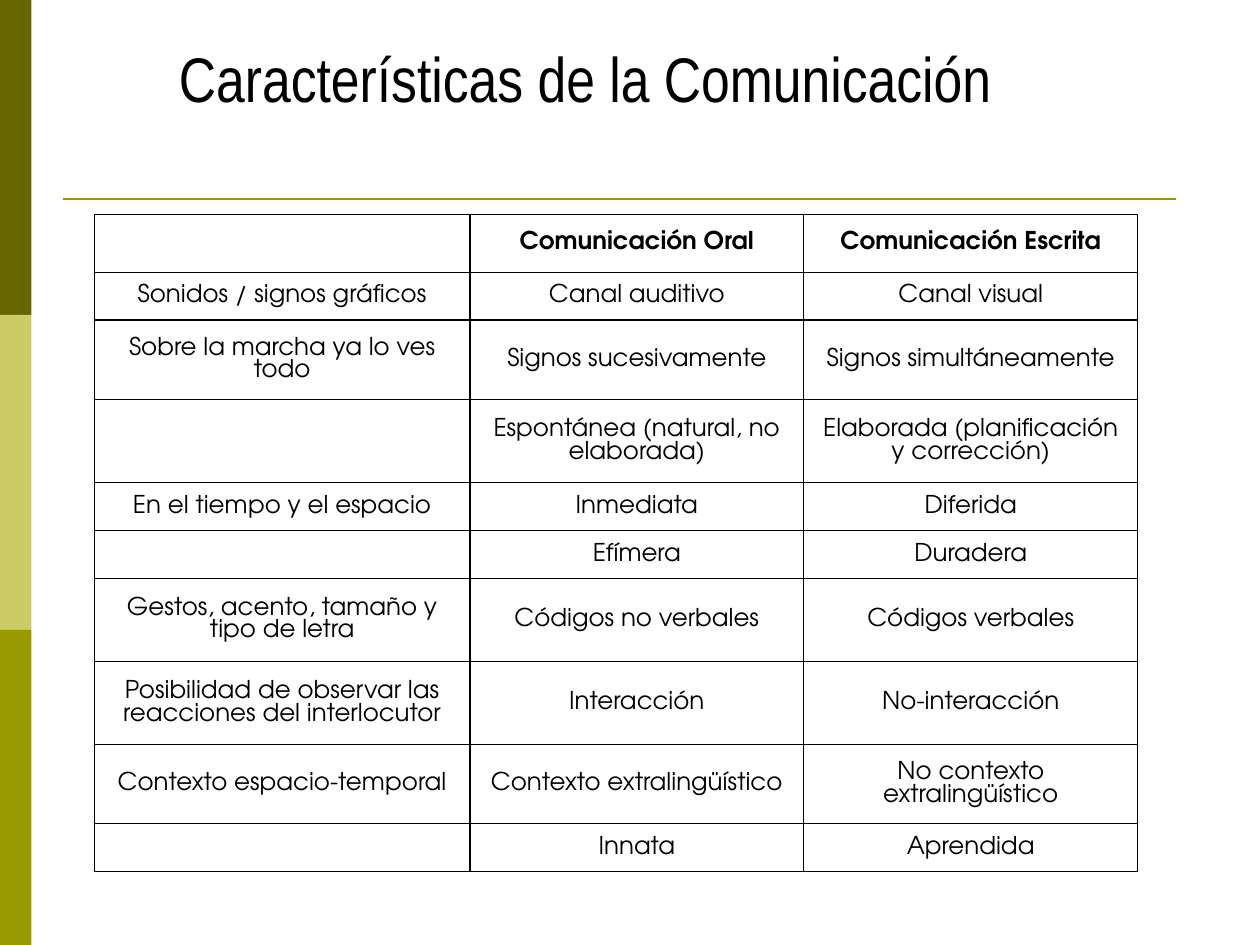
from lxml.etree import SubElement
from pptx import Presentation
from pptx.dml.color import RGBColor
from pptx.enum.shapes import MSO_CONNECTOR, MSO_SHAPE
from pptx.enum.text import MSO_ANCHOR, MSO_AUTO_SIZE, PP_ALIGN
from pptx.oxml import parse_xml
from pptx.oxml.ns import nsdecls, qn
from pptx.util import Inches, Pt

BLACK = RGBColor(0x00, 0x00, 0x00)
DARK_OLIVE = RGBColor(0x66, 0x66, 0x00)
LIGHT_OLIVE = RGBColor(0xCC, 0xCC, 0x66)
OLIVE = RGBColor(0x99, 0x99, 0x00)
TITLE_FONT = "Arial Narrow"
TABLE_FONT = "TeX Gyre Adventor"

TITLE = "Características de la Comunicación"
BAND_COLORS = [DARK_OLIVE, LIGHT_OLIVE, OLIVE]
COLUMN_WIDTHS = [2.98, 2.65, 2.65]
ROWS = [
    (0.46, "", "Comunicación Oral", "Comunicación Escrita"),
    (0.38, "Sonidos / signos gráficos", "Canal auditivo", "Canal visual"),
    (0.63, "Sobre la marcha ya lo ves todo", "Signos sucesivamente", "Signos simultáneamente"),
    (0.66, "", "Espontánea (natural, no elaborada)", "Elaborada (planificación y corrección)"),
    (0.38, "En el tiempo y el espacio", "Inmediata", "Diferida"),
    (0.38, "", "Efímera", "Duradera"),
    (0.66, "Gestos, acento, tamaño y tipo de letra", "Códigos no verbales", "Códigos verbales"),
    (0.66, "Posibilidad de observar las reacciones del interlocutor", "Interacción", "No-interacción"),
    (0.63, "Contexto espacio-temporal", "Contexto extralingüístico", "No contexto extralingüístico"),
    (0.38, "", "Innata", "Aprendida"),
]


def outline_xml(tag):
    return parse_xml(
        f'<a:{tag} {nsdecls("a")} w="{Pt(0.75)}"><a:solidFill>'
        f'<a:srgbClr val="{BLACK}"/></a:solidFill></a:{tag}>'
    )


def add_run(paragraph, text, font_name, size, bold=False):
    run = paragraph.add_run()
    run.text = text
    run.font.name = font_name
    run.font.size = Pt(size)
    run.font.bold = bold
    run.font.color.rgb = BLACK
    return run


def add_bands(slide):
    for index, color in enumerate(BAND_COLORS):
        band = slide.shapes.add_shape(
            MSO_SHAPE.RECTANGLE, 0, Inches(2.5 * index), Inches(0.25), Inches(2.5)
        )
        band.shadow.inherit = False
        band.fill.solid()
        band.fill.fore_color.rgb = color
        band.line.fill.background()


def add_rule(slide):
    rule = slide.shapes.add_connector(
        MSO_CONNECTOR.STRAIGHT, Inches(0.5), Inches(1.58), Inches(9.33), Inches(1.58)
    )
    rule.line.color.rgb = OLIVE
    rule.line.width = Pt(1.5)
    SubElement(rule._element.spPr, qn("a:effectLst"))


def fill_title(slide):
    title = slide.shapes.title
    title.left, title.top = Inches(1.32), Inches(0.21)
    title.width, title.height = Inches(7.35), Inches(0.83)
    frame = title.text_frame
    frame.word_wrap = False
    frame.auto_size = MSO_AUTO_SIZE.NONE
    frame.vertical_anchor = MSO_ANCHOR.TOP
    frame.margin_top = Inches(0.1)
    paragraph = frame.paragraphs[0]
    paragraph.alignment = PP_ALIGN.LEFT
    run = add_run(paragraph, TITLE, TITLE_FONT, 36)
    run.font._element.insert(0, outline_xml("ln"))


def fill_cell(cell, text, bold):
    cell.vertical_anchor = MSO_ANCHOR.MIDDLE
    cell.fill.background()
    properties = cell._tc.get_or_add_tcPr()
    for position, side in enumerate(("lnL", "lnR", "lnT", "lnB")):
        properties.insert(position, outline_xml(side))
    paragraph = cell.text_frame.paragraphs[0]
    paragraph.alignment = PP_ALIGN.CENTER
    if text:
        add_run(paragraph, text, TABLE_FONT, 14, bold)
    else:
        SubElement(paragraph._p, qn("a:endParaRPr"), sz="1400")


def add_comparison(slide):
    heights = [row[0] for row in ROWS]
    table = slide.shapes.add_table(
        len(ROWS), len(COLUMN_WIDTHS), Inches(0.75), Inches(1.7),
        Inches(sum(COLUMN_WIDTHS)), Inches(sum(heights)),
    ).table
    table.horz_banding = False
    table.first_row = False
    for column, width in zip(table.columns, COLUMN_WIDTHS):
        column.width = Inches(width)
    for row_index, (height, *texts) in enumerate(ROWS):
        table.rows[row_index].height = Inches(height)
        for column_index, text in enumerate(texts):
            fill_cell(table.cell(row_index, column_index), text, bold=row_index == 0)


def main():
    presentation = Presentation()
    presentation.slide_width = Inches(10)
    presentation.slide_height = Inches(7.5)
    slide = presentation.slides.add_slide(presentation.slide_layouts[5])
    add_bands(slide)
    add_rule(slide)
    fill_title(slide)
    add_comparison(slide)
    presentation.save("out.pptx")


if __name__ == "__main__":
    main()
